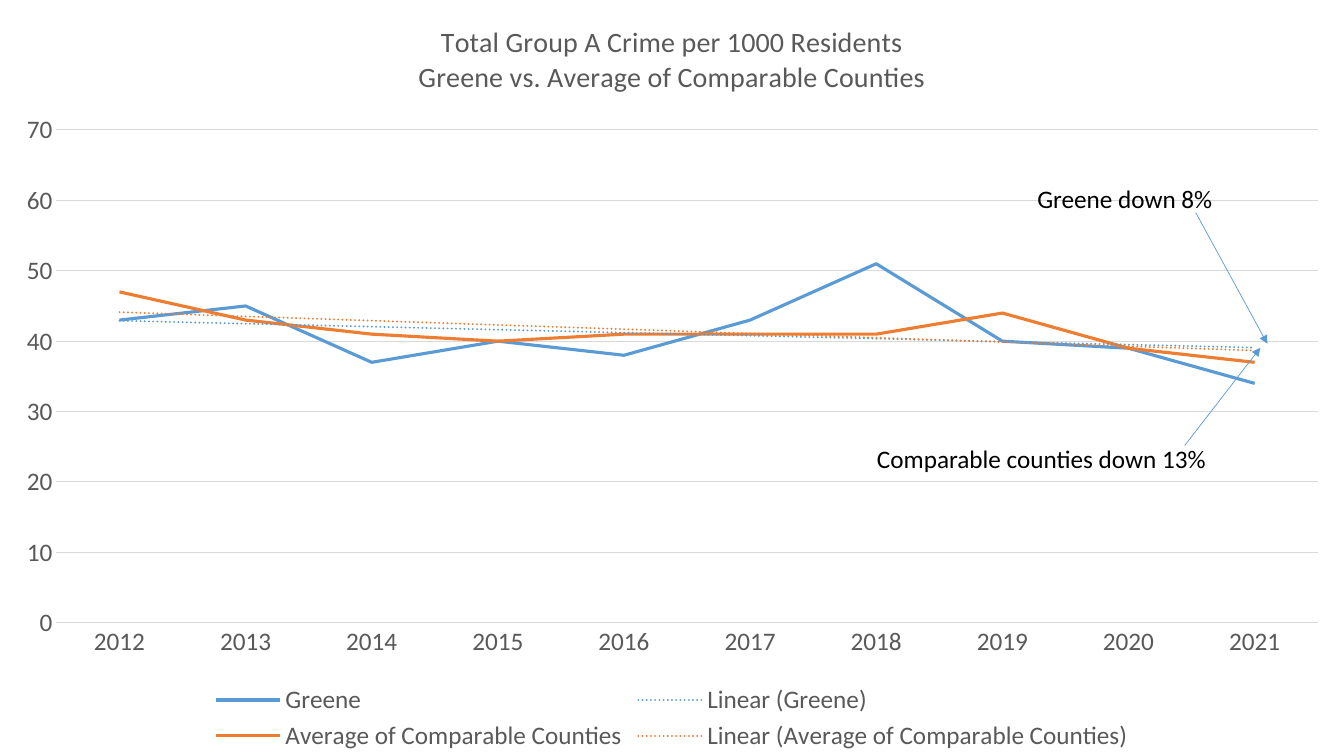
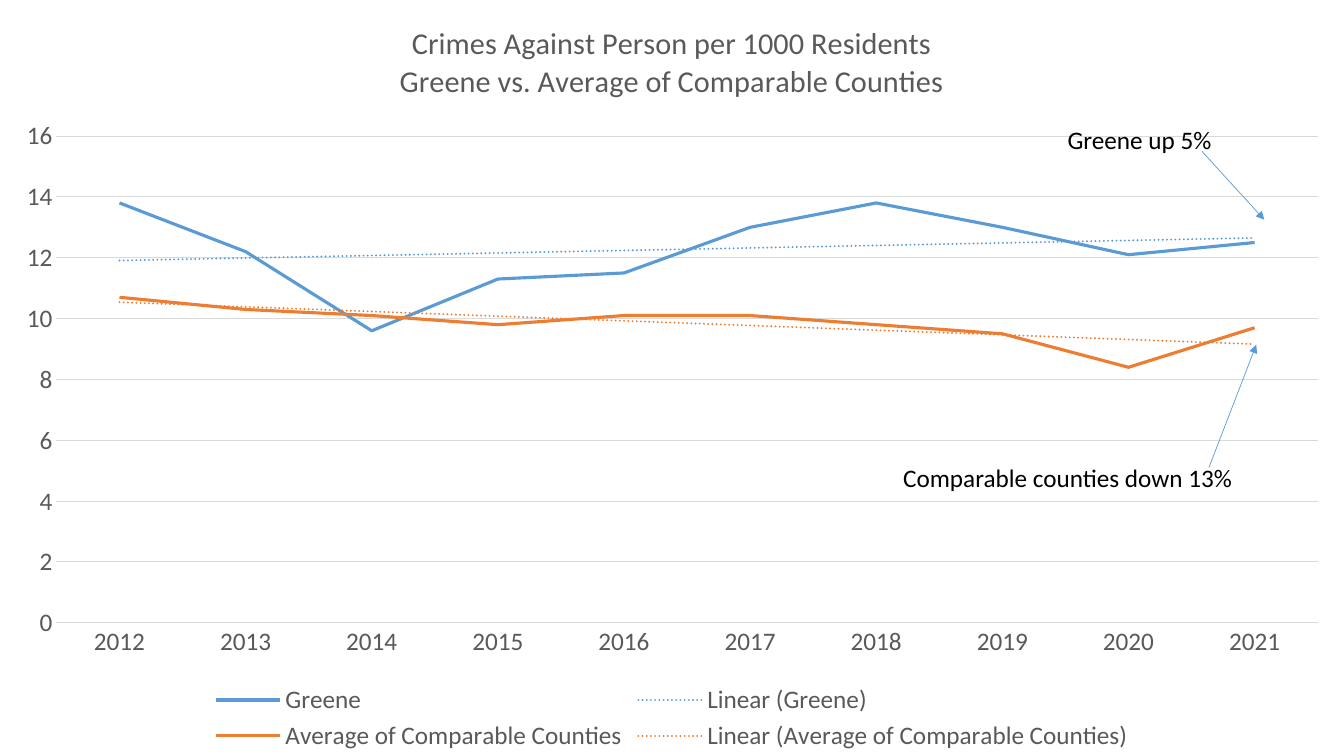
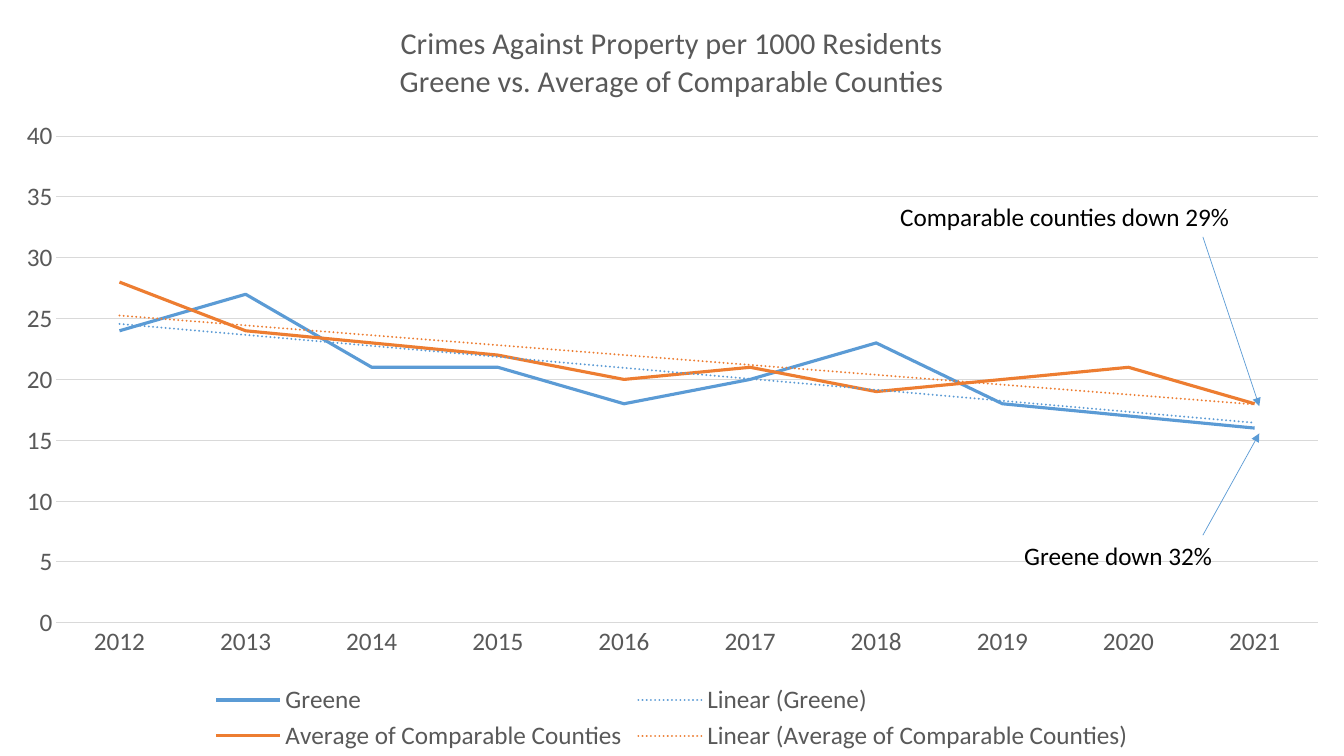
from pptx import Presentation
from pptx.chart.data import CategoryChartData
from pptx.dml.color import RGBColor
from pptx.enum.chart import XL_CHART_TYPE as ChartType, XL_LEGEND_POSITION as LegendPosition
from pptx.enum.chart import XL_MARKER_STYLE as MarkerStyle, XL_TICK_MARK as TickMark
from pptx.enum.shapes import MSO_CONNECTOR as ConnectorType
from pptx.enum.text import MSO_AUTO_SIZE as AutoSize
from pptx.oxml import parse_xml
from pptx.oxml.ns import nsdecls, qn
from pptx.util import Emu, Pt

# Shared look: 100 px to the inch
PX = 9144
WIDTH, HEIGHT = 1333, 750
FONT = "Calibri"
BLACK, GRAY, GRID = "000000", "595959", "D9D9D9"
BLUE, ORANGE = "5B9BD5", "ED7D31"
BODY_SIZE = 18
PLOT_LEFT, PLOT_RIGHT, PLOT_BOTTOM = 56, 1307, 618

YEARS = [str(year) for year in range(2012, 2022)]
SERIES = (("Greene", BLUE), ("Average of Comparable Counties", ORANGE))
SUBTITLE = "Greene vs. Average of Comparable Counties"

# Each note: text, box (left, top, width), arrow start, arrow end
PAGES = [
    {
        "title": "Total Group A Crime per 1000 Residents",
        "title_size": 20, "plot_top": 129, "top_value": 70, "step": 10,
        "values": ([43, 45, 37, 40, 38, 43, 51, 40, 39, 34],
                   [47, 43, 41, 40, 41, 41, 41, 44, 39, 37]),
        "notes": [
            ("Greene down 8%", (1019, 177, 196), (1186, 211), (1257, 341)),
            ("Comparable counties down 13%", (860, 435, 356), (1175, 442), (1250, 345)),
        ],
    },
    {
        "title": "Crimes Against Person per 1000 Residents",
        "title_size": 21.6, "plot_top": 135, "top_value": 16, "step": 2,
        "values": ([13.8, 12.2, 9.6, 11.3, 11.5, 13, 13.8, 13, 12.1, 12.5],
                   [10.7, 10.3, 10.1, 9.8, 10.1, 10.1, 9.8, 9.5, 8.4, 9.7]),
        "notes": [
            ("Greene up 5%", (1049, 118, 197), (1192, 150), (1254, 218)),
            ("Comparable counties down 13%", (886, 454, 350), (1199, 464), (1246, 342)),
        ],
    },
    {
        "title": "Crimes Against Property per 1000 Residents",
        "title_size": 21.6, "plot_top": 135, "top_value": 40, "step": 5,
        "values": ([24, 27, 21, 21, 18, 20, 23, 18, 17, 16],
                   [28, 24, 23, 22, 20, 21, 19, 20, 21, 18]),
        "notes": [
            ("Greene down 32%", (1006, 531, 209), (1193, 531), (1249, 430)),
            ("Comparable counties down 29%", (883, 195, 350), (1193, 235), (1249, 403)),
        ],
    },
]


def px(*lengths):
    return [Emu(length * PX) for length in lengths]


def color(value):
    return RGBColor.from_string(value)


def set_all(target, values):
    for name, value in values.items():
        setattr(target, name, value)


def style_font(font, size, ink):
    set_all(font, {"name": FONT, "size": Pt(size), "bold": False})
    font.color.rgb = color(ink)


def style_line(line, ink, width):
    line.color.rgb = color(ink)
    line.width = Pt(width)


def add_title(chart, lines, size):
    frame = chart.chart_title.text_frame
    frame.text = "\n".join(lines)
    for para in frame.paragraphs:
        for span in para.runs:
            style_font(span.font, size, GRAY)
    chart.chart_title.include_in_layout = False


def place_plot(chart, top):
    """Fix the inner plot area, as fractions of the chart."""
    area = chart.element.find(".//" + qn("c:plotArea"))
    for layout in area.findall(qn("c:layout")):
        area.remove(layout)
    fractions = {
        "x": PLOT_LEFT / WIDTH, "y": top / HEIGHT,
        "w": (PLOT_RIGHT - PLOT_LEFT) / WIDTH, "h": (PLOT_BOTTOM - top) / HEIGHT,
    }
    parts = '<c:layoutTarget val="inner"/><c:xMode val="edge"/><c:yMode val="edge"/>'
    parts += "".join(f'<c:{key} val="{part:.4f}"/>' for key, part in fractions.items())
    area.insert(0, parse_xml(
        f'<c:layout {nsdecls("c")}><c:manualLayout>{parts}</c:manualLayout></c:layout>'))


def add_trend(series, ink):
    trend = parse_xml(
        f'<c:trendline {nsdecls("c", "a")}><c:spPr><a:ln w="{Pt(1.5)}" cap="rnd">'
        f'<a:solidFill><a:srgbClr val="{ink}"/></a:solidFill><a:prstDash val="sysDot"/>'
        '</a:ln></c:spPr><c:trendlineType val="linear"/>'
        '<c:dispRSqr val="0"/><c:dispEq val="0"/></c:trendline>')
    series._element.find(qn("c:cat")).addprevious(trend)


def style_axes(chart, top_value, step):
    years, rates = chart.category_axis, chart.value_axis
    for axis in (years, rates):
        set_all(axis, {"major_tick_mark": TickMark.NONE, "minor_tick_mark": TickMark.NONE})
        style_font(axis.tick_labels.font, BODY_SIZE, GRAY)
    style_line(years.format.line, GRID, 0.75)
    set_all(rates, {"minimum_scale": 0, "maximum_scale": top_value,
                    "major_unit": step, "has_major_gridlines": True})
    set_all(rates.tick_labels, {"number_format": "#,##0", "number_format_is_linked": False})
    rates.format.line.fill.background()
    style_line(rates.major_gridlines.format.line, GRID, 0.75)


def add_trend_chart(page, content):
    data = CategoryChartData()
    data.categories = YEARS
    for (name, _), values in zip(SERIES, content["values"]):
        data.add_series(name, values)
    chart = page.shapes.add_chart(ChartType.LINE, *px(0, 0, WIDTH, HEIGHT), data).chart
    style_font(chart.font, BODY_SIZE, BLACK)
    add_title(chart, (content["title"], SUBTITLE), content["title_size"])
    place_plot(chart, content["plot_top"])
    style_axes(chart, content["top_value"], content["step"])

    # Legend
    chart.has_legend = True
    set_all(chart.legend, {"position": LegendPosition.BOTTOM, "include_in_layout": False})
    style_font(chart.legend.font, BODY_SIZE, GRAY)

    # Lines with their linear trends
    plot = chart.plots[0]
    plot.vary_by_categories = False
    for series, (_, ink) in zip(plot.series, SERIES):
        series.smooth = False
        series.marker.style = MarkerStyle.NONE
        style_line(series.format.line, ink, 2.25)
        add_trend(series, ink)


def add_label(page, text, left, top, width):
    box = page.shapes.add_textbox(*px(left, top, width, 40))
    frame = box.text_frame
    set_all(frame, {"word_wrap": True, "auto_size": AutoSize.SHAPE_TO_FIT_TEXT})
    span = frame.paragraphs[0].add_run()
    span.text = text
    style_font(span.font, BODY_SIZE, BLACK)


def add_arrow(page, start, end):
    arrow = page.shapes.add_connector(ConnectorType.STRAIGHT, *px(*start, *end))
    style_line(arrow.line, BLUE, 0.5)
    arrow.line._get_or_add_ln().append(
        parse_xml(f'<a:tailEnd {nsdecls("a")} type="triangle"/>'))
    arrow._element.spPr.append(parse_xml(f'<a:effectLst {nsdecls("a")}/>'))


def main():
    deck = Presentation()
    deck.slide_width, deck.slide_height = px(WIDTH, HEIGHT)
    for content in PAGES:
        page = deck.slides.add_slide(deck.slide_layouts[6])
        add_trend_chart(page, content)
        for text, box, start, end in content["notes"]:
            add_label(page, text, *box)
            add_arrow(page, start, end)
    deck.save("out.pptx")


if __name__ == "__main__":
    main()
